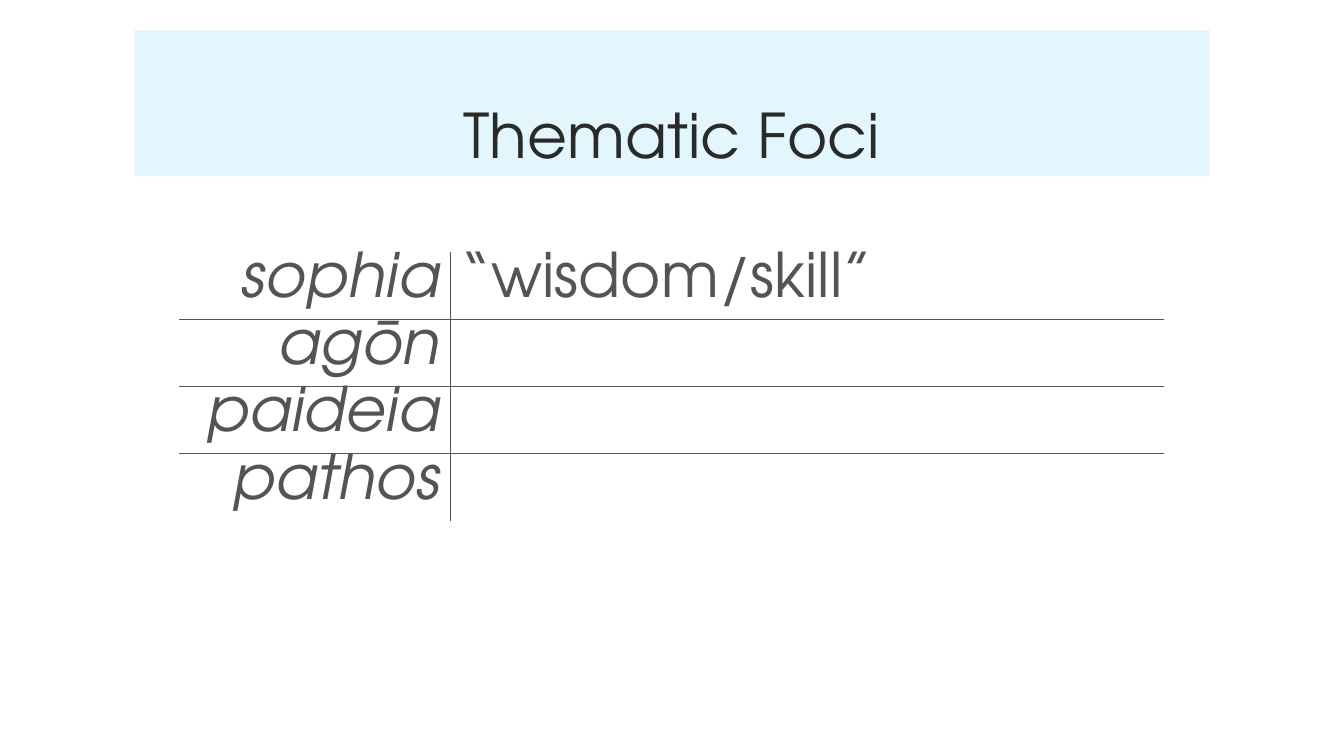
from dataclasses import dataclass

import pptx
import pptx.dml.color
import pptx.enum.shapes
import pptx.enum.text
import pptx.oxml
import pptx.oxml.ns
import pptx.util

Pt = pptx.util.Pt
RGBColor = pptx.dml.color.RGBColor
ALIGN = pptx.enum.text.PP_ALIGN
ANCHOR = pptx.enum.text.MSO_ANCHOR

SKY = RGBColor(0x00, 0xB0, 0xF0)
INK = RGBColor(0x2A, 0x2A, 0x2A)
GREY = RGBColor(0x54, 0x54, 0x54)
FONT = "TeX Gyre Adventor"
FONT_SIZE = 44
COLUMN_WIDTHS = (193.7, 509.8)
ROW_HEIGHT = 48


@dataclass
class Focus:
    term: str
    meaning: str = ""


FOCI = [Focus("sophia", "“wisdom/skill”"), Focus("agōn"), Focus("paideia"), Focus("pathos")]


def add_run(p, text: str, color: RGBColor, italic: bool = False) -> None:
    r = p.add_run()
    r.text = text
    r.font.name = FONT
    r.font.size = Pt(FONT_SIZE)
    r.font.color.rgb = color
    r.font.italic = italic


def add_title(s, text: str) -> None:
    sp = s.shapes.add_shape(
        pptx.enum.shapes.MSO_SHAPE.RECTANGLE, Pt(96), Pt(21.6), Pt(768), Pt(104.4))
    sp.shadow.inherit = False
    sp.line.fill.background()
    sp.fill.solid()
    sp.fill.fore_color.rgb = SKY
    color = sp.fill._xPr.find(".//" + pptx.oxml.ns.qn("a:srgbClr"))
    color.append(pptx.oxml.parse_xml(
        f'<a:alpha {pptx.oxml.ns.nsdecls("a")} val="11000"/>'))
    tf = sp.text_frame
    tf.word_wrap = True
    tf.vertical_anchor = ANCHOR.BOTTOM
    p = tf.paragraphs[0]
    p.alignment = ALIGN.CENTER
    p.line_spacing = 0.9
    add_run(p, text, INK)


def set_borders(cell, ruled: set[str]) -> None:
    """Rule the named sides (L, R, T, B) and clear the others."""
    props = cell._tc.get_or_add_tcPr()
    for i, side in enumerate("LRTB"):
        paint = (f'<a:solidFill><a:srgbClr val="{GREY}"/></a:solidFill>'
                 if side in ruled else "<a:noFill/>")
        props.insert(i, pptx.oxml.parse_xml(
            f'<a:ln{side} {pptx.oxml.ns.nsdecls("a")} w="{Pt(1)}">{paint}</a:ln{side}>'))


def add_foci_table(s, foci: list[Focus]) -> None:
    """Two columns, ruled on the inside only."""
    table = s.shapes.add_table(
        len(foci), 2, Pt(128), Pt(180), Pt(sum(COLUMN_WIDTHS)), Pt(ROW_HEIGHT * len(foci))).table
    table.first_row = False
    table.horz_banding = False
    for column, width in zip(table.columns, COLUMN_WIDTHS):
        column.width = Pt(width)
    for i, focus in enumerate(foci):
        table.rows[i].height = Pt(ROW_HEIGHT)
        ruled = {"T"} if i > 0 else set()
        if i < len(foci) - 1:
            ruled.add("B")
        for j, text in enumerate((focus.term, focus.meaning)):
            is_term = j == 0
            cell = table.cell(i, j)
            cell.margin_top = cell.margin_bottom = Pt(0)
            cell.fill.background()
            set_borders(cell, ruled | {"R" if is_term else "L"})
            p = cell.text_frame.paragraphs[0]
            p.alignment = ALIGN.RIGHT if is_term else ALIGN.LEFT
            if text:
                add_run(p, text, GREY, italic=is_term)


def main() -> None:
    prs = pptx.Presentation()
    prs.slide_width, prs.slide_height = Pt(960), Pt(540)
    s = prs.slides.add_slide(prs.slide_layouts[6])
    add_title(s, "Thematic Foci")
    add_foci_table(s, FOCI)
    prs.save("out.pptx")


if __name__ == "__main__":
    main()
